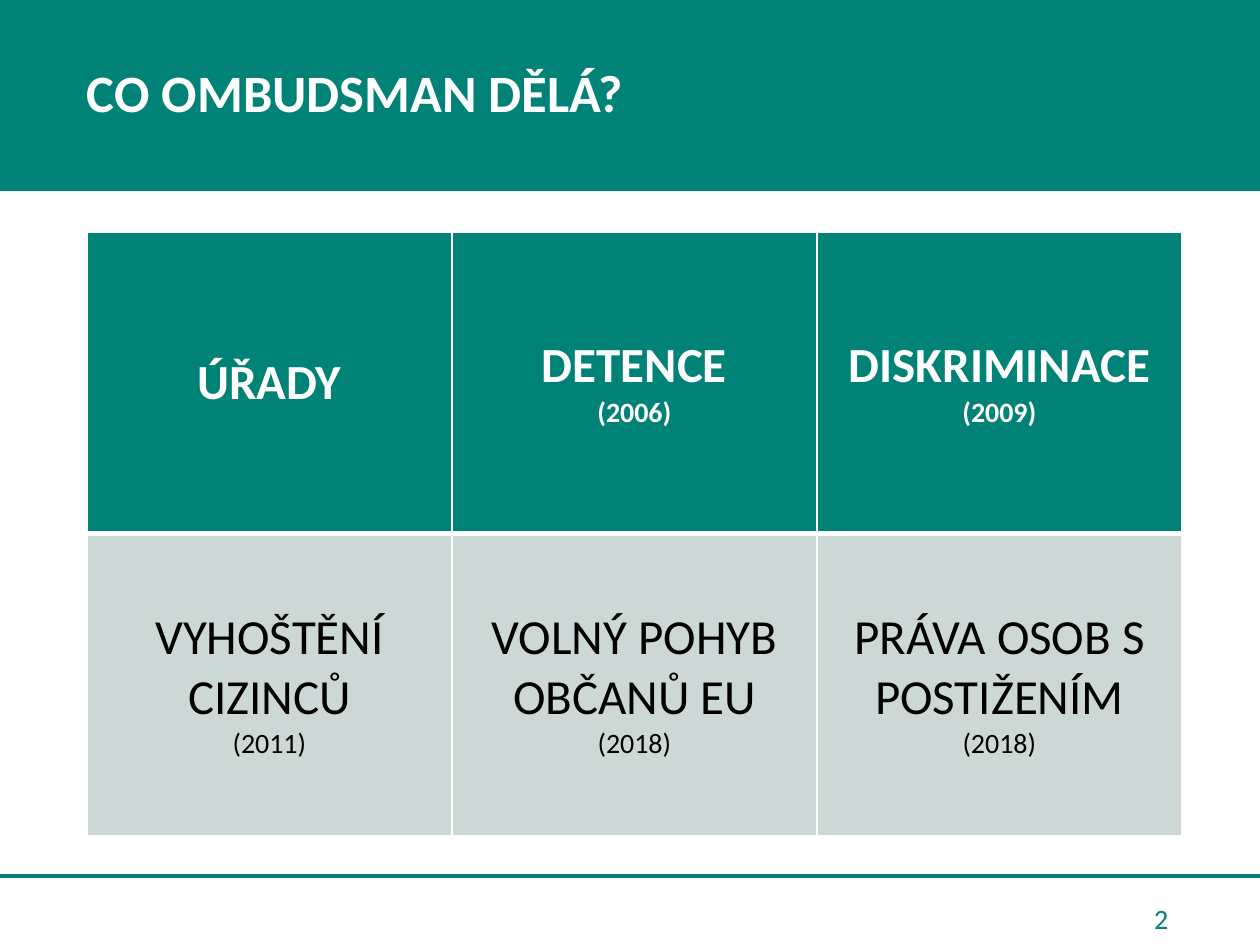
import dataclasses

import lxml.etree
import pptx
import pptx.dml.color
import pptx.enum.shapes
import pptx.enum.text
import pptx.oxml.ns
import pptx.util

Inches = pptx.util.Inches
Pt = pptx.util.Pt
qn = pptx.oxml.ns.qn
ALIGN = pptx.enum.text.PP_ALIGN
MIDDLE = pptx.enum.text.MSO_ANCHOR.MIDDLE


@dataclasses.dataclass(frozen=True)
class Theme:
    font: str = "Calibri"
    green: str = "008276"
    pale: str = "CCD8D6"
    white: str = "FFFFFF"
    black: str = "000000"
    title_size: int = 30
    topic_size: int = 28
    small_size: int = 16


def rgb(value):
    return pptx.dml.color.RGBColor.from_string(value)


class SlideBuilder:
    def __init__(self, slide, theme):
        self.slide = slide
        self.theme = theme

    def style(self, paragraph, size, color, bold=False, align=ALIGN.LEFT):
        paragraph.alignment = align
        for run in paragraph.runs:
            run.font.name = self.theme.font
            run.font.size = Pt(size)
            run.font.bold = bold
            run.font.color.rgb = rgb(color)

    def rule(self, left, right, y):
        line = self.slide.shapes.add_connector(
            pptx.enum.shapes.MSO_CONNECTOR.STRAIGHT,
            Inches(left), Inches(y), Inches(right), Inches(y))
        line.line.color.rgb = rgb(self.theme.green)
        line.line.width = Pt(2.25)
        lxml.etree.SubElement(line._element.spPr, qn("a:effectLst"))

    def band(self, width, height):
        band = self.slide.shapes.add_shape(
            pptx.enum.shapes.MSO_SHAPE.RECTANGLE, 0, 0, Inches(width), Inches(height))
        band.shadow.inherit = False
        band.fill.solid()
        band.fill.fore_color.rgb = rgb(self.theme.green)
        band.line.color.rgb = rgb(self.theme.green)
        band.line.width = Pt(1)

    def title(self, text, width, height):
        """Fill the title placeholder and bring it in front of the band."""
        title = self.slide.shapes.title
        title.left, title.top = 0, 0
        title.width, title.height = Inches(width), Inches(height)
        frame = title.text_frame
        frame.text = text
        frame.vertical_anchor = MIDDLE
        frame.auto_size = pptx.enum.text.MSO_AUTO_SIZE.NONE
        heading = frame.paragraphs[0]
        heading.line_spacing = 0.9
        heading._p.get_or_add_pPr().set("marL", str(Inches(0.59)))
        self.style(heading, self.theme.title_size, self.theme.white, bold=True)
        self.slide.shapes._spTree.append(title._element)

    def borders(self, cell, widths):
        """Draw white cell borders; widths maps L, R, T and B to points."""
        properties = cell._tc.get_or_add_tcPr()
        for index, side in enumerate("LRTB"):
            border = lxml.etree.Element(qn(f"a:ln{side}"), w=str(Pt(widths[side])))
            fill = lxml.etree.SubElement(border, qn("a:solidFill"))
            lxml.etree.SubElement(fill, qn("a:srgbClr"), val=self.theme.white)
            properties.insert(index, border)

    def cell(self, cell, topic, year, is_header):
        theme = self.theme
        color = theme.white if is_header else theme.black
        cell.text_frame.text = f"{topic}\n{year}" if year else topic
        cell.vertical_anchor = MIDDLE
        for paragraph, size in zip(cell.text_frame.paragraphs,
                                   (theme.topic_size, theme.small_size)):
            self.style(paragraph, size, color, is_header, ALIGN.CENTER)
        cell.fill.solid()
        cell.fill.fore_color.rgb = rgb(theme.green if is_header else theme.pale)
        self.borders(cell, {"L": 1, "R": 1, "T": 1 if is_header else 3,
                            "B": 3 if is_header else 1})

    def table(self, rows, left, top, width, height):
        table = self.slide.shapes.add_table(
            len(rows), len(rows[0]), Inches(left), Inches(top),
            Inches(width), Inches(height)).table
        for row_index, row in enumerate(rows):
            for column_index, (topic, year) in enumerate(row):
                self.cell(table.cell(row_index, column_index), topic, year,
                          is_header=row_index == 0)

    def page_number(self, text, left, top, width, height):
        box = self.slide.shapes.add_textbox(
            Inches(left), Inches(top), Inches(width), Inches(height))
        frame = box.text_frame
        frame.word_wrap = True
        frame.vertical_anchor = MIDDLE
        frame.text = text
        self.style(frame.paragraphs[0], self.theme.small_size, self.theme.green,
                   align=ALIGN.RIGHT)


POWERS = [
    [("ÚŘADY", ""), ("DETENCE", "(2006)"), ("DISKRIMINACE", "(2009)")],
    [("VYHOŠTĚNÍ CIZINCŮ", "(2011)"), ("VOLNÝ POHYB OBČANŮ EU", "(2018)"),
     ("PRÁVA OSOB S POSTIŽENÍM", "(2018)")],
]


def main():
    deck = pptx.Presentation()
    deck.slide_width, deck.slide_height = Inches(10), Inches(7.5)
    title_only = deck.slide_layouts[5]
    builder = SlideBuilder(deck.slides.add_slide(title_only), Theme())
    builder.rule(-0.03, 10.04, 6.95)
    builder.band(10.04, 1.51)
    builder.title("CO OMBUDSMAN DĚLÁ?", 10, 1.51)
    builder.table(POWERS, 0.69, 1.84, 8.69, 4.79)
    builder.page_number("2", 7.08, 7.09, 2.29, 0.4)
    deck.save("out.pptx")


if __name__ == "__main__":
    main()
